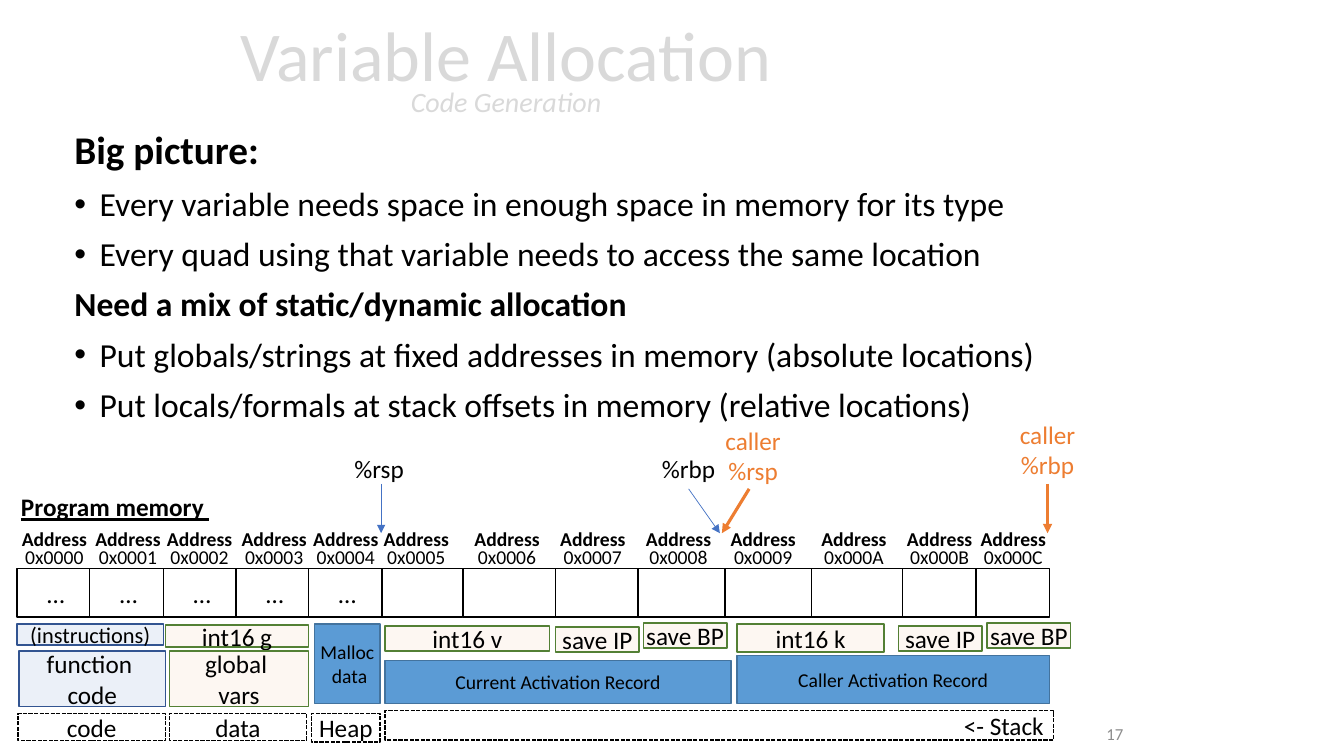
"""Build the Variable Allocation slide with its program memory diagram."""
from dataclasses import dataclass
from itertools import pairwise

from lxml.etree import SubElement
from pptx import Presentation
from pptx.dml.color import RGBColor
from pptx.enum.dml import MSO_LINE
from pptx.enum.shapes import MSO_CONNECTOR, MSO_SHAPE
from pptx.enum.text import MSO_ANCHOR, MSO_AUTO_SIZE, PP_ALIGN
from pptx.oxml.ns import qn
from pptx.util import Cm, Pt


@dataclass(frozen=True)
class Theme:
    font: str = "Calibri"
    black: str = "000000"
    white: str = "FFFFFF"
    heading: str = "D9D9D9"
    number: str = "8C8C8C"
    blue: str = "4472C4"
    blue_edge: str = "325491"
    peach: str = "F4B183"
    green_edge: str = "538035"
    record: str = "5B9BD5"
    record_edge: str = "43739E"
    orange: str = "ED7D31"
    title: int = 50
    subtitle: int = 20
    lead: int = 28
    body: int = 24
    label: int = 18
    compact: int = 16
    small: int = 14
    footer: int = 12


def inches(value):
    return Cm(value * 2.54)


class SlideBuilder:
    def __init__(self, prs, theme):
        self.theme = theme
        self.slide = prs.slides.add_slide(prs.slide_layouts[5])

    def font(self, r, size, color=None, bold=False, italic=False, underline=False):
        r.font.name = self.theme.font
        r.font.size = Pt(size)
        r.font.color.rgb = RGBColor.from_string(color or self.theme.black)
        r.font.bold, r.font.italic, r.font.underline = bold, italic, underline

    def set_text(self, tf, text, size, align, **style):
        tf.text = text
        for p in tf.paragraphs:
            p.alignment = align
            for r in p.runs:
                self.font(r, size, **style)

    def title(self, text, subtitle, at):
        sp = self.slide.shapes.title
        sp.left, sp.top, sp.width, sp.height = map(inches, at)
        tf = sp.text_frame
        tf.auto_size = MSO_AUTO_SIZE.NONE
        tf.vertical_anchor = MSO_ANCHOR.MIDDLE
        tf.text = text
        p = tf.paragraphs[0]
        p.alignment, p.line_spacing = PP_ALIGN.CENTER, 0.7
        p.add_line_break()
        p.add_run().text = subtitle
        self.font(p.runs[0], self.theme.title, self.theme.heading)
        self.font(p.runs[1], self.theme.subtitle, self.theme.heading, italic=True)

    def body(self, lines, at):
        tf = self.slide.shapes.add_textbox(*map(inches, at)).text_frame
        tf.word_wrap = True
        tf.text = "\n".join(text for text, _, _ in lines)
        for p, (_, size, bulleted) in zip(tf.paragraphs, lines):
            p.line_spacing, p.space_before = 0.9, Pt(10)
            self.font(p.runs[0], size, bold=not bulleted)
            if bulleted:
                pPr = p._p.get_or_add_pPr()
                pPr.set("marL", str(inches(0.25)))
                pPr.set("indent", str(-inches(0.25)))
                SubElement(pPr, qn("a:buFont"), typeface="Arial")
                SubElement(pPr, qn("a:buChar"), char="•")

    def label(self, text, at, size, align=PP_ALIGN.LEFT, wrap=False, inset=0.1, **style):
        tf = self.slide.shapes.add_textbox(*map(inches, at)).text_frame
        tf.word_wrap = wrap
        tf.auto_size = MSO_AUTO_SIZE.SHAPE_TO_FIT_TEXT
        tf.margin_left = tf.margin_right = inches(inset)
        self.set_text(tf, text, size, align, **style)

    def box(self, at, fill=None, edge=None, text="", size=None, opacity=None,
            dashed=False, inset=0.1, align=PP_ALIGN.CENTER):
        sp = self.slide.shapes.add_shape(MSO_SHAPE.RECTANGLE, *map(inches, at))
        sp.shadow.inherit = False
        if fill:
            sp.fill.solid()
            sp.fill.fore_color.rgb = RGBColor.from_string(fill)
        else:
            sp.fill.background()
        if opacity:
            color = sp.element.spPr.find(".//" + qn("a:srgbClr"))
            SubElement(color, qn("a:alpha"), val=str(opacity * 1000))
        sp.line.color.rgb = RGBColor.from_string(edge or self.theme.black)
        sp.line.width = Pt(1)
        if dashed:
            sp.line.dash_style = MSO_LINE.SQUARE_DOT
        tf = sp.text_frame
        tf.word_wrap = True
        tf.vertical_anchor = MSO_ANCHOR.MIDDLE
        tf.margin_left = tf.margin_right = inches(inset)
        if text:
            self.set_text(tf, text, size or self.theme.label, align)

    def arrow(self, start, end, color, width):
        points = map(inches, (*start, *end))
        line = self.slide.shapes.add_connector(MSO_CONNECTOR.STRAIGHT, *points)
        line.line.color.rgb = RGBColor.from_string(color)
        line.line.width = Pt(width)
        spPr = line.element.spPr
        SubElement(spPr.find(qn("a:ln")), qn("a:tailEnd"), type="triangle")
        SubElement(spPr, qn("a:effectLst"))


def draw_memory(s, t):
    edges = [0.17, 0.89, 1.62, 2.34, 3.06, 3.79, 4.59, 5.51, 6.33, 7.19, 8.05, 8.95, 9.68, 10.41]
    centers = [0.54, 1.27, 1.98, 2.72, 3.43, 4.13, 5.03, 5.88, 6.73, 7.57, 8.47, 9.32, 10.05]
    s.label("Program memory ", (0.11, 4.83, 2.09, 0.4), t.label, bold=True, underline=True)
    for i, ((left, right), center) in enumerate(zip(pairwise(edges), centers)):
        s.box((left, 5.64, right - left, 0.48), t.white)
        for text, top, width, bold in (("Address", 5.18, 0.78, True),
                                       (f"0x{i:04X}", 5.36, 0.63, False)):
            s.label(text, (center - width / 2, top, width, 0.34), t.small,
                    PP_ALIGN.CENTER, wrap=True, inset=0, bold=bold)
        if i < 5:
            s.label("…", (left + 0.2, 5.69, 0.38, 0.4), t.label)


def draw_contents(s, t):
    for text, at, size in (("(instructions)", (0.17, 6.19, 1.45, 0.21), t.compact),
                           ("function \ncode", (0.19, 6.46, 1.45, 0.55), t.label)):
        s.box(at, t.blue, t.blue_edge, text, size, opacity=10)
    for text, at, inset in (
        ("int16 g", (1.64, 6.2, 1.42, 0.22), 0.1),
        ("global \nvars", (1.68, 6.46, 1.38, 0.55), 0.1),
        ("int16 v", (3.82, 6.21, 1.63, 0.25), 0.1),
        ("save IP", (5.51, 6.22, 0.83, 0.25), 0),
        ("save BP", (6.38, 6.18, 0.83, 0.25), 0),
        ("int16 k", (7.31, 6.19, 1.46, 0.28), 0.1),
        ("save IP", (8.91, 6.21, 0.83, 0.25), 0),
        ("save BP", (9.79, 6.18, 0.83, 0.25), 0),
    ):
        s.box(at, t.peach, t.green_edge, text, opacity=10, inset=inset)
    for text, at, inset in (
        ("Malloc\n data", (3.12, 6.19, 0.65, 0.79), 0),
        ("Current Activation Record", (3.82, 6.55, 3.43, 0.43), 0.1),
        ("Caller Activation Record", (7.31, 6.5, 3.1, 0.48), 0.1),
    ):
        s.box(at, t.record, t.record_edge, text, t.small, inset=inset)
    for text, at, inset, align in (
        ("code", (0.18, 7.08, 1.46, 0.27), 0.1, PP_ALIGN.CENTER),
        ("data", (1.68, 7.08, 1.36, 0.27), 0.1, PP_ALIGN.CENTER),
        ("Heap", (3.09, 7.08, 0.68, 0.28), 0, PP_ALIGN.CENTER),
        ("<- Stack", (3.82, 7.05, 6.63, 0.29), 0.1, PP_ALIGN.RIGHT),
    ):
        s.box(at, text=text, dashed=True, inset=inset, align=align)


def draw_pointers(s, t):
    for text, at, start, end, color, line, width in (
        ("%rsp", (3.41, 4.45, 0.7, 0.4), (3.78, 4.8), (3.78, 5.29), t.black, t.blue, 0.5),
        ("%rbp", (6.46, 4.45, 0.74, 0.4), (6.83, 4.85), (7.14, 5.29), t.black, t.blue, 0.5),
        ("caller\n%rsp", (7.09, 4.17, 0.76, 0.71), (7.43, 4.85), (7.16, 5.29),
         t.orange, t.orange, 2.25),
        ("caller\n%rbp", (10.01, 4.11, 0.76, 0.71), (10.39, 4.8), (10.39, 5.29),
         t.orange, t.orange, 2.25),
    ):
        s.arrow(start, end, line, width)
        s.label(text, at, t.label, PP_ALIGN.CENTER, color=color)


def main():
    prs = Presentation()
    prs.slide_width, prs.slide_height = inches(13.33), inches(7.5)
    t = Theme()
    s = SlideBuilder(prs, t)
    s.title("Variable Allocation", "Code Generation", (0.02, 0.03, 10, 1.45))
    s.body([
        ("Big picture:", t.lead, False),
        ("Every variable needs space in enough space in memory for its type", t.body, True),
        ("Every quad using that variable needs to access the same location", t.body, True),
        ("Need a mix of static/dynamic allocation", t.body, False),
        ("Put globals/strings at fixed addresses in memory (absolute locations)", t.body, True),
        ("Put locals/formals at stack offsets in memory (relative locations)", t.body, True),
    ], (0.64, 1.25, 10.14, 4.49))
    draw_memory(s, t)
    draw_contents(s, t)
    draw_pointers(s, t)
    s.label("17", (8.99, 7.13, 2.25, 0.28), t.footer, PP_ALIGN.RIGHT, wrap=True, color=t.number)
    prs.save("out.pptx")


if __name__ == "__main__":
    main()
